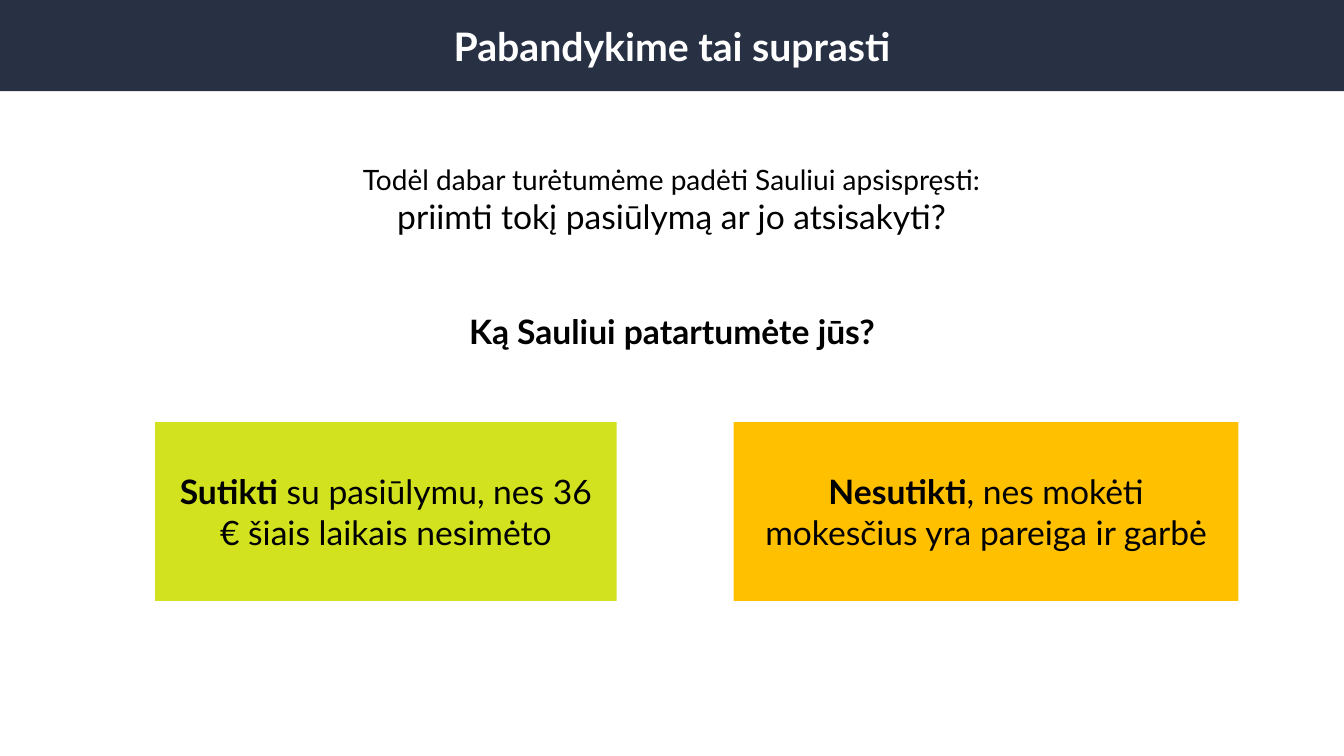
"""Build the slide asking whether to accept or refuse an offer."""
from pptx import Presentation
from pptx.dml.color import RGBColor
from pptx.enum.shapes import MSO_SHAPE
from pptx.enum.text import MSO_ANCHOR, PP_ALIGN
from pptx.util import Cm, Pt

RECTANGLE = MSO_SHAPE.RECTANGLE
MIDDLE = MSO_ANCHOR.MIDDLE
CENTER = PP_ALIGN.CENTER
FONT = "Lato"
COLORS = {"navy": "283044", "lime": "D2E21F", "amber": "FFC000",
          "black": "000000", "white": "FFFFFF"}


def rgb(name):
    return RGBColor.from_string(COLORS[name])


def style_paragraph(p, size, color="black", bold=None):
    p.alignment = CENTER
    p.font.name = FONT
    p.font.size = Pt(size)
    p.font.color.rgb = rgb(color)
    p.font.bold = bold


def add_text(s, left, top, width, height, lines, bold=None):
    tf = s.shapes.add_textbox(Cm(left), Cm(top), Cm(width), Cm(height)).text_frame
    tf.word_wrap = True
    for i, (text, size) in enumerate(lines):
        p = tf.add_paragraph() if i else tf.paragraphs[0]
        p.text = text
        style_paragraph(p, size, bold=bold)


def add_box(s, left, top, width, height, fill):
    sp = s.shapes.add_shape(RECTANGLE, Cm(left), Cm(top), Cm(width), Cm(height))
    sp.shadow.inherit = False
    sp.fill.solid()
    sp.fill.fore_color.rgb = rgb(fill)
    sp.line.fill.background()
    tf = sp.text_frame
    tf.word_wrap = True
    tf.vertical_anchor = MIDDLE
    return tf


def add_title(s, text):
    p = add_box(s, 0, 0, 33.87, 2.3, "navy").paragraphs[0]
    p.text = text
    style_paragraph(p, 28, "white", True)


def add_choice(s, left, width, fill, answer, reason):
    tf = add_box(s, left, 10.64, width, 4.5, fill)
    tf.margin_left = tf.margin_right = Cm(0.6)
    p = tf.paragraphs[0]
    style_paragraph(p, 24)
    for text, bold in ((answer, True), (reason, False)):
        r = p.add_run()
        r.text = text
        r.font.bold = bold


def main():
    prs = Presentation()
    prs.slide_width, prs.slide_height = Cm(33.87), Cm(19.05)
    s = prs.slides.add_slide(prs.slide_layouts[6])
    add_title(s, "Pabandykime tai suprasti")
    add_text(s, 2.2, 3.96, 29.45, 2.13, [
        ("Todėl dabar turėtumėme padėti Sauliui apsispręsti:", 20),
        ("priimti tokį pasiūlymą ar jo atsisakyti?", 24)])
    add_text(s, 3.89, 7.7, 26.09, 1.27,
             [("Ką Sauliui patartumėte jūs?", 24)], bold=True)
    add_choice(s, 3.91, 11.63, "lime", "Sutikti",
               " su pasiūlymu, nes 36 € šiais laikais nesimėto")
    add_choice(s, 18.49, 12.72, "amber", "Nesutikti",
               ", nes mokėti mokesčius yra pareiga ir garbė")
    prs.save("out.pptx")


if __name__ == "__main__":
    main()
